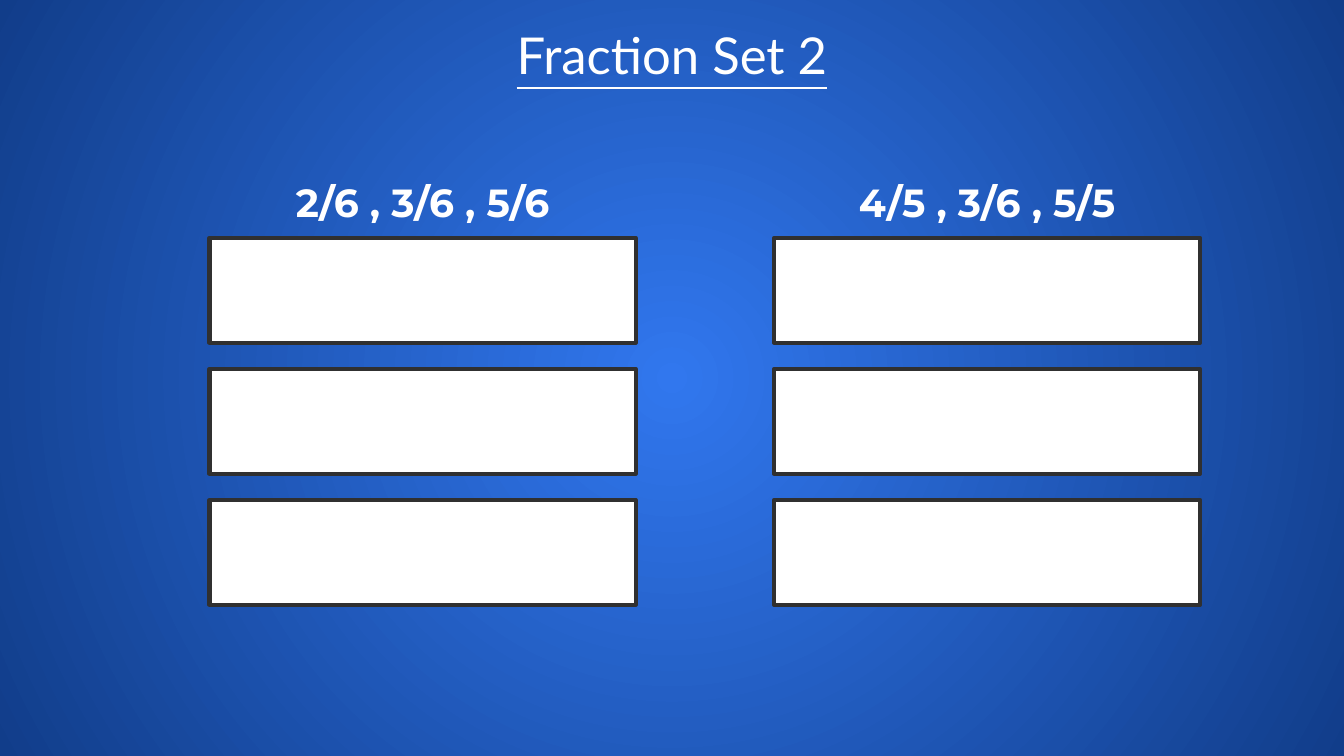
from lxml import etree
from pptx import Presentation
from pptx.dml.color import RGBColor
from pptx.enum import shapes, text
from pptx.oxml import ns
from pptx.util import Inches, Pt

WHITE = "FFFFFF"
SLIDE_WIDTH = 10
SLIDE_HEIGHT = SLIDE_WIDTH * 9 / 16
COLUMNS = [(1.56, "2/6 , 3/6 , 5/6"), (5.76, "4/5 , 3/6 , 5/5")]
ROWS = 3
BOX_WIDTH, BOX_HEIGHT = 3.17, 0.78
FIRST_TOP, LAST_TOP = 1.77, 3.72
BOX_STEP = (LAST_TOP - FIRST_TOP) / (ROWS - 1)
LABEL_WIDTH = 2.57


def color(value):
    return RGBColor.from_string(value)


def set_background(slide, center, edge):
    fill = slide.background.fill
    fill.gradient()
    for stop, value in zip(fill.gradient_stops, (center, edge)):
        stop.color.rgb = color(value)
    grad = slide.element.find(".//" + ns.qn("a:gradFill"))
    grad.remove(grad.find(ns.qn("a:lin")))
    radial = etree.SubElement(grad, ns.qn("a:path"), {"path": "circle"})
    etree.SubElement(radial, ns.qn("a:fillToRect"),
                     {side: "50000" for side in "ltrb"})


def place(sp, left, top, width, height):
    sp.left, sp.top = Inches(left), Inches(top)
    sp.width, sp.height = Inches(width), Inches(height)


def write_text(sp, content, *, font, size, bold=False, underline=False,
               spacing=1.0, auto_size=text.MSO_AUTO_SIZE.NONE):
    tf = sp.text_frame
    tf.word_wrap = True
    tf.auto_size = auto_size
    tf.vertical_anchor = text.MSO_ANCHOR.TOP
    tf.margin_left = tf.margin_right = Inches(0.1)
    tf.margin_top = tf.margin_bottom = Inches(0.1)
    p = tf.paragraphs[0]
    p.alignment = text.PP_ALIGN.CENTER
    p.line_spacing = spacing
    p.space_before = Pt(0)
    r = p.add_run()
    r.text = content
    r.font.name = font
    r.font.size = Pt(size)
    r.font.bold = bold
    r.font.underline = underline
    r.font.color.rgb = color(WHITE)


def add_title(slide, content):
    sp = slide.shapes.title
    place(sp, 0.34, 0.08, 9.32, 0.63)
    write_text(sp, content, font="Lato", size=27.2, underline=True)


def add_label(slide, left, content):
    sp = slide.shapes.add_textbox(Inches(left), Inches(0.88),
                                  Inches(LABEL_WIDTH), Inches(0.56))
    write_text(sp, content, font="Montserrat", size=21, bold=True, spacing=2.0,
               auto_size=text.MSO_AUTO_SIZE.SHAPE_TO_FIT_TEXT)


def add_box(slide, left, top):
    sp = slide.shapes.add_shape(shapes.MSO_SHAPE.RECTANGLE, Inches(left), Inches(top),
                                Inches(BOX_WIDTH), Inches(BOX_HEIGHT))
    sp.shadow.inherit = False
    sp.fill.solid()
    sp.fill.fore_color.rgb = color(WHITE)
    sp.line.color.rgb = color("303030")
    sp.line.width = Pt(2.25)


def main():
    prs = Presentation()
    prs.slide_width, prs.slide_height = Inches(SLIDE_WIDTH), Inches(SLIDE_HEIGHT)
    slide = prs.slides.add_slide(prs.slide_layouts[5])
    set_background(slide, "3177EE", "113D8A")
    add_title(slide, "Fraction Set 2")
    for left, fractions in COLUMNS:
        add_label(slide, left + (BOX_WIDTH - LABEL_WIDTH) / 2, fractions)
        for row in range(ROWS):
            add_box(slide, left, FIRST_TOP + row * BOX_STEP)
    prs.save("out.pptx")


if __name__ == "__main__":
    main()
